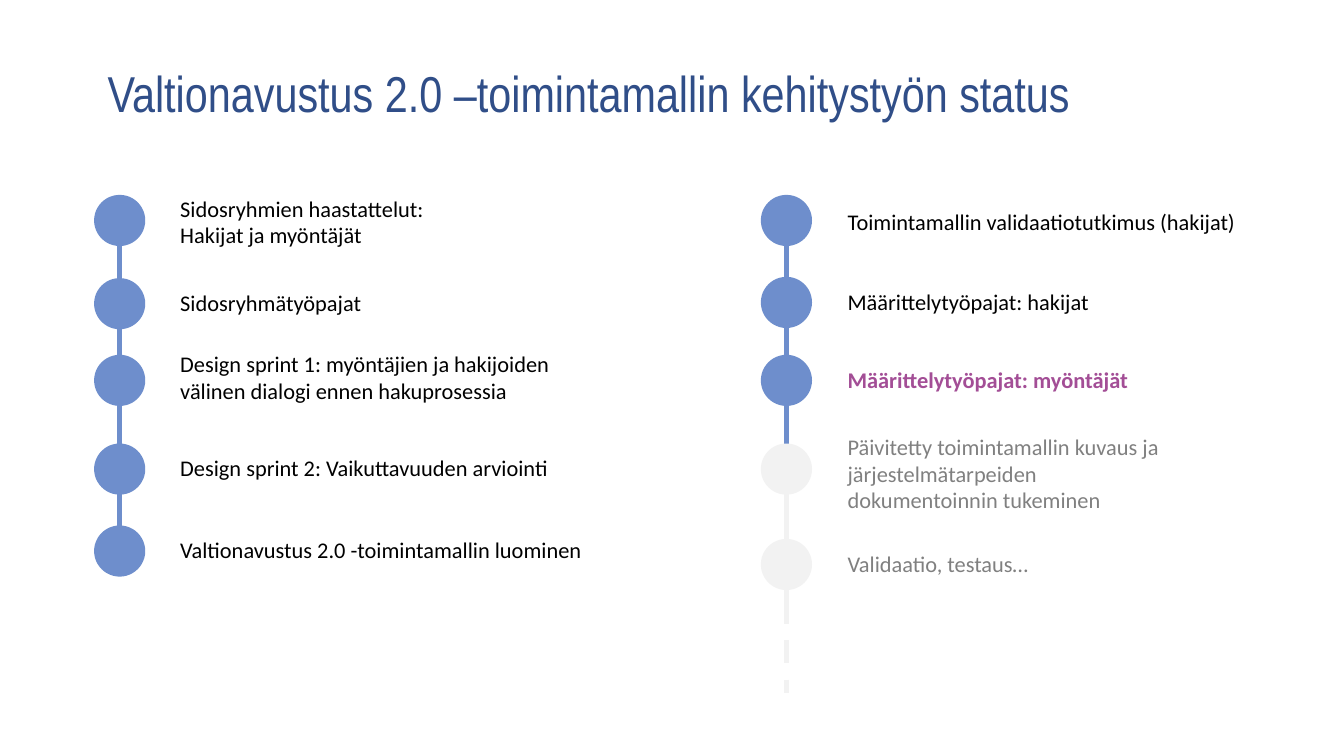
from pptx import Presentation
from pptx.dml.color import RGBColor
from pptx.enum.dml import MSO_LINE
from pptx.enum.shapes import MSO_CONNECTOR, MSO_SHAPE
from pptx.enum.text import MSO_ANCHOR, PP_ALIGN
from pptx.oxml.ns import qn
from pptx.util import Pt
from lxml.etree import SubElement

THEME = {
    "done": RGBColor.from_string("6E8ECC"),
    "pending": RGBColor.from_string("F2F2F2"),
    "title": {"name": "Arial Narrow", "size": Pt(27), "bold": False,
              "color": RGBColor.from_string("304E88")},
    "past": {"name": "Calibri", "size": Pt(12), "bold": False,
             "color": RGBColor.from_string("000000")},
    "current": {"name": "Calibri", "size": Pt(12), "bold": True,
                "color": RGBColor.from_string("A34E96")},
    "future": {"name": "Calibri", "size": Pt(12), "bold": False,
               "color": RGBColor.from_string("808080")},
}
DOT = 27.4
LINE_HEIGHT = 14.6
PADDING = 7.2


def set_font(font, style):
    for key, value in THEME[style].items():
        if key == "color":
            font.color.rgb = value
        else:
            setattr(font, key, value)


prs = Presentation()
prs.slide_width, prs.slide_height = Pt(720), Pt(405)
s = prs.slides.add_slide(prs.slide_layouts[5])

title = s.shapes.title
title.left, title.top, title.width, title.height = Pt(50.4), Pt(18.7), Pt(610), Pt(67.7)
tf = title.text_frame
tf.word_wrap = True
tf.vertical_anchor = MSO_ANCHOR.MIDDLE
p = tf.paragraphs[0]
p.alignment, p.line_spacing = PP_ALIGN.LEFT, 0.8
r = p.add_run()
r.text = "Valtionavustus 2.0 –toimintamallin kehitystyön status"
set_font(r.font, "title")

# Timeline segments: centre x, top, bottom, state, dash
segments = [
    (64.1, 118, 295, "done", None),
    (421.3, 118, 260, "done", None),
    (421.3, 264, 328.3, "pending", None),
    (421.3, 301, 371, "pending", MSO_LINE.DASH),
]
for x, top, bottom, state, dash in segments:
    line = s.shapes.add_connector(MSO_CONNECTOR.STRAIGHT, Pt(x), Pt(top), Pt(x), Pt(bottom))
    line.line.color.rgb = THEME[state]
    line.line.width = Pt(3)
    if dash:
        line.line.dash_style = dash
    SubElement(line._element.spPr, qn("a:effectLst"))

# Steps: dot centre y, text centre y, text width, line count, style, text
timelines = [
    (64.1, 89.5, [
        (118.1, 119, 294, 2, "past", "Sidosryhmien haastattelut:\vHakijat ja myöntäjät"),
        (162.7, 162, 294, 1, "past", "Sidosryhmätyöpajat"),
        (203.8, 202.5, 230.4, 2, "past",
         "Design sprint 1: myöntäjien ja hakijoiden välinen dialogi ennen hakuprosessia"),
        (251.3, 250.7, 294, 1, "past", "Design sprint 2: Vaikuttavuuden arviointi"),
        (295.2, 294.7, 294, 1, "past", "Valtionavustus 2.0 -toimintamallin luominen"),
    ]),
    (421.3, 447, [
        (118.1, 119, 240, 1, "past", "Toimintamallin validaatiotutkimus (hakijat)"),
        (162, 161.7, 219, 1, "past", "Määrittelytyöpajat: hakijat"),
        (203.8, 203.3, 219, 1, "current", "Määrittelytyöpajat: myöntäjät"),
        (251.3, 253.8, 197.3, 3, "future",
         "Päivitetty toimintamallin kuvaus ja järjestelmätarpeiden dokumentoinnin tukeminen"),
        (302.4, 302.2, 197.3, 1, "future", "Validaatio, testaus…"),
    ]),
]
for dot_x, text_x, steps in timelines:
    for dot_y, text_y, width, lines, style, text in steps:
        dot = s.shapes.add_shape(MSO_SHAPE.OVAL, Pt(dot_x - DOT / 2), Pt(dot_y - DOT / 2),
                                 Pt(DOT), Pt(DOT))
        dot.shadow.inherit = False
        dot.fill.solid()
        dot.fill.fore_color.rgb = THEME["pending" if style == "future" else "done"]
        dot.line.fill.background()

        height = lines * LINE_HEIGHT + PADDING
        sp = s.shapes.add_textbox(Pt(text_x), Pt(text_y - height / 2), Pt(width), Pt(height))
        tf = sp.text_frame
        tf.word_wrap = True
        p = tf.paragraphs[0]
        p.text = text
        for r in p.runs:
            set_font(r.font, style)

prs.save("out.pptx")
